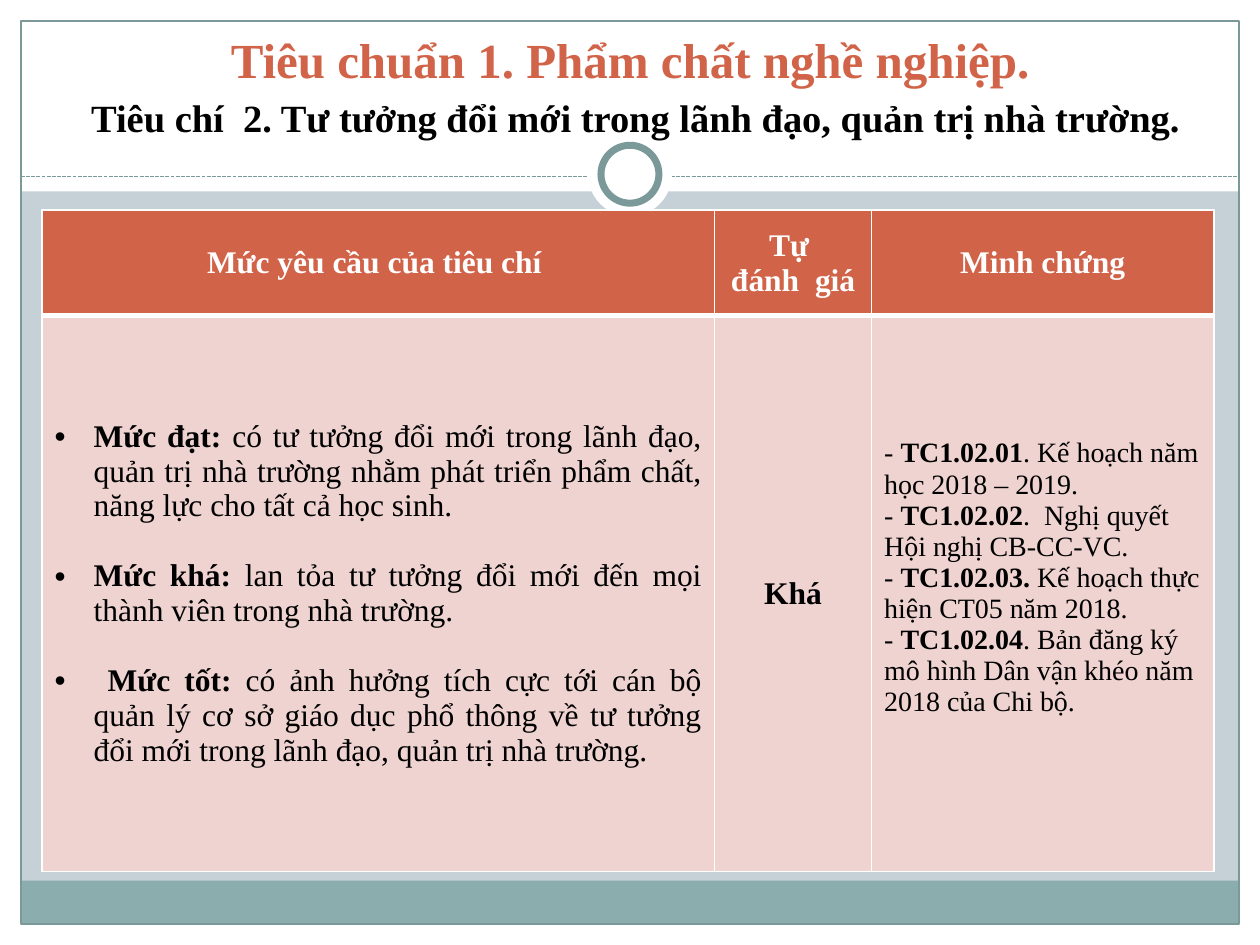
from dataclasses import dataclass

from lxml.etree import SubElement as Sub
from pptx import Presentation
from pptx.dml.color import RGBColor as RGB
from pptx.enum.dml import MSO_LINE as Dash
from pptx.enum.shapes import MSO_CONNECTOR as Link, MSO_SHAPE as Kind
from pptx.enum.text import MSO_ANCHOR as Anchor, PP_ALIGN as Align
from pptx.oxml import parse_xml
from pptx.oxml.ns import nsdecls, qn
from pptx.util import Emu, Inches, Pt

COLS, ROWS = 60, 45
UNIT = Inches(10) / COLS


@dataclass(frozen=True)
class Theme:
    font: str = "Times New Roman"
    white: str = "FFFFFF"
    black: str = "000000"
    back: str = "C5D1D7"
    foot: str = "8CADAE"
    edge: str = "7C999A"
    head: str = "D16349"
    body: str = "EED3D0"
    title: int = 28
    gap: int = 25
    topic: int = 22
    cell: int = 18
    proof: int = 16


@dataclass(frozen=True)
class Box:
    """A region of the grid, in columns and rows."""
    x: float
    y: float
    w: float
    h: float

    def inner(self, x, y, w, h):
        return Box(self.x + x, self.y + y, w, h)

    def place(self):
        return [grid(n) for n in (self.x, self.y, self.w, self.h)]


T = Theme()

LEVELS = [
    ("Mức đạt: ", "có tư tưởng đổi mới trong lãnh đạo, quản trị nhà trường "
     "nhằm phát triển phẩm chất, năng lực cho tất cả học sinh."),
    ("Mức khá: ", "lan tỏa tư tưởng đổi mới đến mọi thành viên trong nhà trường. "),
    (" Mức tốt: ", "có ảnh hưởng tích cực tới cán bộ quản lý cơ sở giáo dục phổ "
     "thông về tư tưởng đổi mới trong lãnh đạo, quản trị nhà trường. "),
]
PROOFS = [
    ("TC1.02.01", ". Kế hoạch năm học 2018 – 2019."),
    ("TC1.02.02", ".  Nghị quyết Hội nghị CB-CC-VC."),
    ("TC1.02.03. ", "Kế hoạch thực hiện CT05 năm 2018."),
    ("TC1.02.04", ". Bản đăng ký mô hình Dân vận khéo năm 2018 của Chi bộ."),
]
HEADS = [["Mức yêu cầu của tiêu chí "], ["Tự ", "đánh  giá"], ["Minh chứng"]]


def grid(n):
    return Emu(round(n * UNIT))


def write(para, text, size=T.cell, color=T.black, bold=False):
    run = para.add_run()
    run.text = text
    font = run.font
    font.name, font.size, font.bold = T.font, Pt(size), bold
    font.color.rgb = RGB.from_string(color)


def lines(frame, count, align):
    """Return the given number of paragraphs of an empty frame."""
    paras = [frame.paragraphs[0]] + [frame.add_paragraph() for _ in range(count - 1)]
    for para in paras:
        para.alignment = align
    return paras


def shape(slide, box, kind=Kind.RECTANGLE, fill=None, line=None, width=0.75):
    item = slide.shapes.add_shape(kind, *box.place())
    item.shadow.inherit = False
    if fill:
        item.fill.solid()
        item.fill.fore_color.rgb = RGB.from_string(fill)
    else:
        item.fill.background()
    if line:
        item.line.color.rgb = RGB.from_string(line)
        item.line.width = Pt(width)
    else:
        item.line.fill.background()


def rule(slide, x, y, end):
    item = slide.shapes.add_connector(
        Link.STRAIGHT, grid(x), grid(y), grid(end), grid(y))
    item.line.color.rgb = RGB.from_string(T.edge)
    item.line.width = Pt(0.75)
    item.line.dash_style = Dash.SQUARE_DOT
    Sub(item.element.spPr, qn("a:effectLst"))


def ring(slide, box):
    shape(slide, box, Kind.OVAL, T.white)
    inset = 0.62
    side = box.w - 2 * inset
    shape(slide, box.inner(inset, inset, side, side), Kind.OVAL, T.white, T.edge, 4)


def decor(slide, box):
    """Draw the white margins, foot band, frame, dashed rule and ring."""
    w, h = box.w, box.h
    for band in ((0, h - 1, w, 1), (0, 0, w, 9.12), (0, 0, 1, h), (w - 1, 0, 1, h)):
        shape(slide, box.inner(*band), fill=T.white)
    shape(slide, box.inner(1, h - 3.06, w - 2, 2.06), fill=T.foot)
    shape(slide, box.inner(1, 1, w - 2, h - 2), line=T.edge)
    rule(slide, box.x + 1, box.y + 8.4, box.x + w - 1)
    ring(slide, box.inner(w / 2 - 2, 6.3, 4, 4))


def title(slide, box):
    frame = slide.shapes.add_textbox(*box.place()).text_frame
    frame.word_wrap = True
    frame.vertical_anchor = Anchor.BOTTOM
    para = lines(frame, 1, Align.CENTER)[0]
    write(para, "Tiêu chuẩn 1. Phẩm chất nghề nghiệp.", size=T.title,
          color=T.head, bold=True)
    para.add_line_break()
    write(para, " ", size=T.gap, color=T.head, bold=True)
    write(para, "Tiêu chí  2. Tư tưởng đổi mới trong lãnh đạo, quản trị nhà trường.",
          size=T.topic, bold=True)


def style(cell, fill, top, low):
    cell.vertical_anchor = Anchor.MIDDLE
    cell.fill.solid()
    cell.fill.fore_color.rgb = RGB.from_string(fill)
    props = cell._tc.get_or_add_tcPr()
    for i, (side, width) in enumerate(zip("LRTB", (1, 1, top, low))):
        props.insert(i, parse_xml(
            f'<a:ln{side} {nsdecls("a")} w="{Pt(width)}"><a:solidFill>'
            f'<a:srgbClr val="{T.white}"/></a:solidFill></a:ln{side}>'))


def bullet(para):
    props = para._p.get_or_add_pPr()
    props.set("marL", str(Inches(0.31)))
    props.set("indent", str(-Inches(0.31)))
    Sub(props, qn("a:buFont"), typeface="Arial")
    Sub(props, qn("a:buChar"), char="•")


def levels(frame):
    for i, (para, (name, text)) in enumerate(
            zip(lines(frame, len(LEVELS), Align.JUSTIFY), LEVELS)):
        para.space_before = Pt(20 if i else 0)
        bullet(para)
        write(para, name, bold=True)
        write(para, text)


def proofs(frame):
    for para, (code, text) in zip(lines(frame, len(PROOFS), Align.LEFT), PROOFS):
        write(para, "- ", size=T.proof)
        write(para, code, size=T.proof, bold=True)
        write(para, text, size=T.proof)


def table(slide, box):
    sheet = slide.shapes.add_table(2, 3, *box.place()).table
    for col, share in zip(sheet.columns, (0.574, 0.134, 0.292)):
        col.width = grid(box.w * share)
    for row, share in zip(sheet.rows, (0.16, 0.84)):
        row.height = grid(box.h * share)
    for i, head in enumerate(HEADS):
        top, low = sheet.cell(0, i), sheet.cell(1, i)
        style(top, T.head, 1, 3)
        style(low, T.body, 3, 1)
        for para, text in zip(lines(top.text_frame, len(head), Align.CENTER), head):
            write(para, text, color=T.white, bold=True)
    levels(sheet.cell(1, 0).text_frame)
    grade = lines(sheet.cell(1, 1).text_frame, 1, Align.CENTER)[0]
    write(grade, "Khá", bold=True)
    proof = sheet.cell(1, 2)
    proof.margin_bottom = Inches(0.3)
    proofs(proof.text_frame)


def main():
    deck = Presentation()
    deck.slide_width, deck.slide_height = grid(COLS), grid(ROWS)
    slide = deck.slides.add_slide(deck.slide_layouts[6])
    slide.background.fill.solid()
    slide.background.fill.fore_color.rgb = RGB.from_string(T.back)
    page = Box(0, 0, COLS, ROWS)
    decor(slide, page)
    title(slide, page.inner(2, 0.5, 56, 6.5))
    table(slide, page.inner(2, 10, 55.8, 31.5))
    deck.save("out.pptx")


if __name__ == "__main__":
    main()
